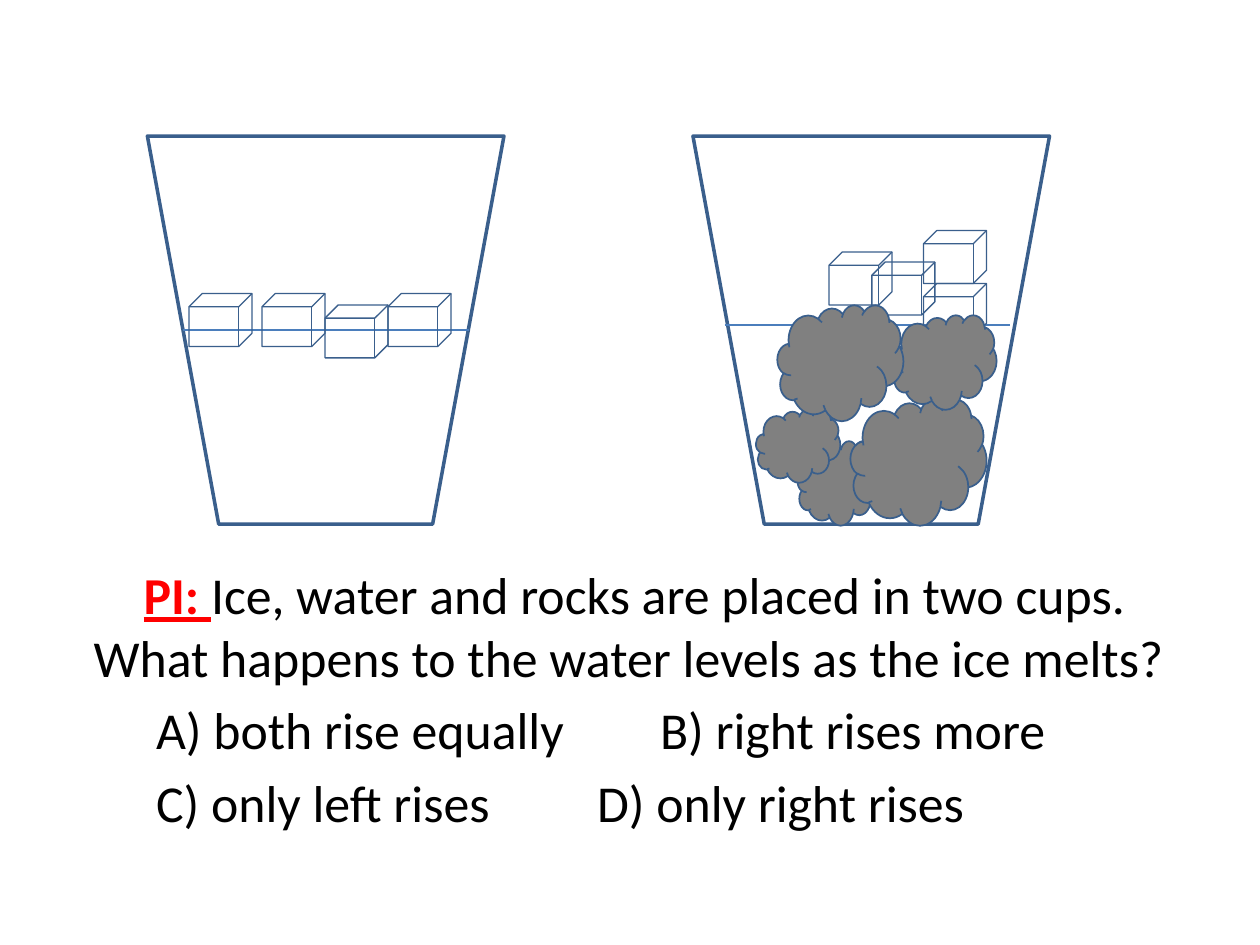
"""Build a slide asking how melting ice changes the water level in two cups."""
from lxml.etree import SubElement
from pptx import Presentation
from pptx.dml.color import RGBColor
from pptx.enum.shapes import MSO_CONNECTOR, MSO_SHAPE as Preset
from pptx.enum.text import PP_ALIGN as Align
from pptx.oxml.ns import qn
from pptx.util import Inches, Pt

COLORS = {"outline": "3A5F8C", "water": "4B7EBC", "rock": "808080",
          "label": "FF0000", "text": "000000"}
LABEL = "PI: "
QUESTION = ("Ice, water and rocks are placed in two cups. "
            "What happens to the water levels as the ice melts? ")
ANSWERS = ["\tA) both rise equally \t\tB) right rises more",
           "\tC) only left rises \t\tD) only right rises"]
TEXT_BOX = (0.58, 4.42, 8.92, 2.67)
HANGING_INDENT = 0.56
CUP_SIZE = (2.83, 3.08)
CUPS = [(1.17, 1.08), (5.5, 1.08)]
WATER_WIDTH = 2.27
WATER_LEVELS = [(1.45, 2.62), (5.75, 2.58)]
CUBE_SIZE = (0.5, 0.42)
ICE_CUBES = [(2.08, 2.33), (1.5, 2.33), (3.08, 2.33), (7.33, 2.25),
             (2.58, 2.42), (6.58, 2), (6.92, 2.08), (7.33, 1.83)]
ROCKS = [(6.33, 3.5, 0.67, 0.67), (6, 3.25, 0.67, 0.58), (6.75, 3.17, 1.08, 1),
         (7.08, 2.5, 0.83, 0.75), (6.17, 2.42, 1, 0.92)]


def color(name):
    return RGBColor.from_string(COLORS[name])


def add_outline(slide, preset, box, line_width, fill=None):
    shape = slide.shapes.add_shape(preset, *map(Inches, box))
    shape.shadow.inherit = False
    if fill:
        shape.fill.solid()
        shape.fill.fore_color.rgb = color(fill)
    else:
        shape.fill.background()
    shape.line.color.rgb = color("outline")
    shape.line.width = Pt(line_width)


def add_water_level(slide, left, level):
    ends = map(Inches, (left, level, left + WATER_WIDTH, level))
    connector = slide.shapes.add_connector(MSO_CONNECTOR.STRAIGHT, *ends)
    connector.line.color.rgb = color("water")
    connector.line.width = Pt(0.75)
    SubElement(connector._element.spPr, qn("a:effectLst"))


def style_paragraph(paragraph):
    paragraph.space_before = Pt(6)
    paragraph.font.size = Pt(29.6)
    paragraph.font.name = "Calibri"
    paragraph.font.color.rgb = color("text")


def add_question(slide):
    frame = slide.shapes.add_textbox(*map(Inches, TEXT_BOX)).text_frame
    frame.word_wrap = True
    question = frame.paragraphs[0]
    question.alignment = Align.CENTER
    style_paragraph(question)
    label = question.add_run()
    label.text = LABEL
    label.font.bold = label.font.underline = True
    label.font.color.rgb = color("label")
    question.add_run().text = QUESTION
    for answer in ANSWERS:
        paragraph = frame.add_paragraph()
        style_paragraph(paragraph)
        properties = paragraph._p.get_or_add_pPr()
        properties.set("marL", str(Inches(HANGING_INDENT)))
        properties.set("indent", str(-Inches(HANGING_INDENT)))
        paragraph.add_run().text = answer


def main():
    presentation = Presentation()
    presentation.slide_width, presentation.slide_height = Inches(10), Inches(7.5)
    slide = presentation.slides.add_slide(presentation.slide_layouts[6])
    add_question(slide)
    for cup in CUPS:
        add_outline(slide, Preset.FLOWCHART_MANUAL_OPERATION, cup + CUP_SIZE, 2)
    for left, level in WATER_LEVELS:
        add_water_level(slide, left, level)
    for cube in ICE_CUBES:
        add_outline(slide, Preset.CUBE, cube + CUBE_SIZE, 0.75)
    for rock in ROCKS:
        add_outline(slide, Preset.CLOUD, rock, 1, "rock")
    presentation.save("out.pptx")


if __name__ == "__main__":
    main()
